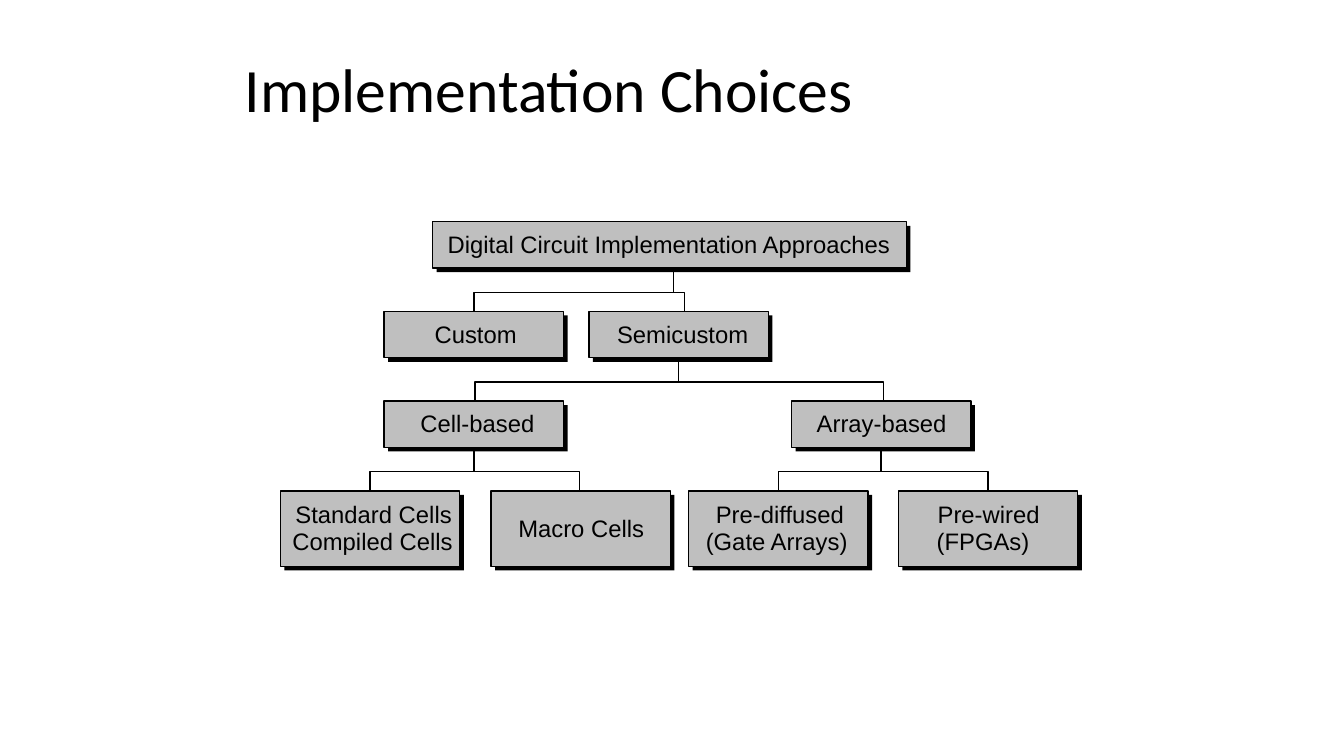
from lxml import etree
from pptx import Presentation
from pptx.dml.color import RGBColor
from pptx.enum.shapes import MSO_CONNECTOR as CONNECTOR, MSO_SHAPE as SHAPE
from pptx.enum.text import MSO_ANCHOR as ANCHOR, PP_ALIGN as ALIGN
from pptx.oxml.ns import qn
from pptx.util import Inches, Pt

COLORS = {"ink": "000000", "box": "BFBFBF"}
TITLE_FONT = {"name": "Calibri", "size": Pt(44)}
LABEL_FONT = {"name": "Arial", "size": Pt(17)}
ZERO_MARGINS = {"margin_left": 0, "margin_right": 0,
                "margin_top": 0, "margin_bottom": 0}

FIRST_ROW, ROW_STEP = 2.2, 0.89
BOX_WIDTH, BOX_HEIGHT, LEAF_HEIGHT = 1.78, 0.46, 0.75
SHADOW_OFFSET = 0.04
BUS_RISE = 0.19

# Row, left, width, lines as (text, indent)
BOXES = {
    "root": (0, 4.29, 4.7, [("Digital Circuit Implementation Approaches", 0.15)]),
    "custom": (1, 3.81, BOX_WIDTH, [("Custom", 0.5)]),
    "semicustom": (1, 5.84, BOX_WIDTH, [("Semicustom", 0.28)]),
    "cell": (2, 3.81, BOX_WIDTH, [("Cell-based", 0.36)]),
    "array": (2, 7.85, BOX_WIDTH, [("Array-based", 0.25)]),
    "standard": (3, 2.78, BOX_WIDTH, [("Standard Cells", 0.15), ("Compiled Cells", 0.12)]),
    "macro": (3, 4.87, BOX_WIDTH, [("Macro Cells", 0.27)]),
    "gate arrays": (3, 6.83, BOX_WIDTH, [("Pre-diffused", 0.27), ("(Gate Arrays)", 0.17)]),
    "fpga": (3, 8.91, BOX_WIDTH, [("Pre-wired", 0.39), ("(FPGAs)", 0.38)]),
}

# Parent box, row below it, left and right ends of the bracket
BRANCHES = [
    ("semicustom", 2, 4.71, 8.76),
    ("cell", 3, 3.67, 5.75),
    ("array", 3, 7.72, 9.8),
]
ROOT_BRANCH = (1, 4.7, 6.79)
ROOT_STEM_X, ROOT_STEM_TOP = 6.68, 2.7


def color(name):
    return RGBColor.from_string(COLORS[name])


def row_top(row):
    return FIRST_ROW + row * ROW_STEP


def apply(target, values):
    for name, value in values.items():
        setattr(target, name, value)


def style_line(line):
    line.color.rgb = color("ink")
    line.width = Pt(1)


def write(paragraph, text, font):
    run = paragraph.add_run()
    run.text = text
    apply(run.font, font)
    run.font.color.rgb = color("ink")


def add_title(slide, text):
    title = slide.shapes.add_textbox(Inches(2.33), Inches(0.5), Inches(8.5), Inches(0.83))
    apply(title.text_frame, {"word_wrap": True, "vertical_anchor": ANCHOR.MIDDLE})
    paragraph = title.text_frame.paragraphs[0]
    paragraph.line_spacing = 0.9
    write(paragraph, text, TITLE_FONT)


def add_rectangle(slide, left, top, width, height, fill):
    shape = slide.shapes.add_shape(SHAPE.RECTANGLE, Inches(left), Inches(top),
                                   Inches(width), Inches(height))
    shape.shadow.inherit = False
    shape.fill.solid()
    shape.fill.fore_color.rgb = color(fill)
    return shape


def add_box(slide, row, left, width, lines):
    top = row_top(row)
    height = LEAF_HEIGHT if row == 3 else BOX_HEIGHT
    backing = add_rectangle(slide, left + SHADOW_OFFSET, top + SHADOW_OFFSET,
                            width, height, "ink")
    backing.line.fill.background()
    box = add_rectangle(slide, left, top, width, height, "box")
    style_line(box.line)
    frame = box.text_frame
    apply(frame, {"word_wrap": True, "vertical_anchor": ANCHOR.MIDDLE, **ZERO_MARGINS})
    for index, (text, indent) in enumerate(lines):
        paragraph = frame.add_paragraph() if index else frame.paragraphs[0]
        paragraph.alignment = ALIGN.LEFT
        paragraph.line_spacing = Pt(19)
        paragraph._p.get_or_add_pPr().set("marL", str(Inches(indent)))
        write(paragraph, text, LABEL_FONT)
    return box


def add_stem(slide, x, top, bottom, parent=None):
    stem = slide.shapes.add_connector(CONNECTOR.STRAIGHT, x, top, x, bottom)
    if parent is not None:
        stem.begin_connect(parent, 2)
    style_line(stem.line)
    etree.SubElement(stem._element.spPr, qn("a:effectLst"))


def add_bracket(slide, row, left, right):
    bottom = row_top(row)
    bus = bottom - BUS_RISE
    builder = slide.shapes.build_freeform(Inches(left), Inches(bottom))
    corners = [(left, bus), (right, bus), (right, bottom)]
    builder.add_line_segments([(Inches(x), Inches(y)) for x, y in corners], close=False)
    bracket = builder.convert_to_shape()
    bracket.shadow.inherit = False
    bracket.fill.background()
    style_line(bracket.line)
    return Inches(bus)


def main():
    presentation = Presentation()
    presentation.slide_width = Inches(13.33)
    presentation.slide_height = Inches(7.5)
    slide = presentation.slides.add_slide(presentation.slide_layouts[6])

    add_title(slide, "Implementation Choices")
    boxes = {name: add_box(slide, *details) for name, details in BOXES.items()}

    # The root stem stands a little right of the box middle
    bus = add_bracket(slide, *ROOT_BRANCH)
    add_stem(slide, Inches(ROOT_STEM_X), Inches(ROOT_STEM_TOP), bus)

    # Lower branches hang from the middle of their parent
    for name, row, left, right in BRANCHES:
        parent = boxes[name]
        bus = add_bracket(slide, row, left, right)
        add_stem(slide, parent.left + parent.width // 2,
                 parent.top + parent.height, bus, parent)

    presentation.save("out.pptx")


if __name__ == "__main__":
    main()
